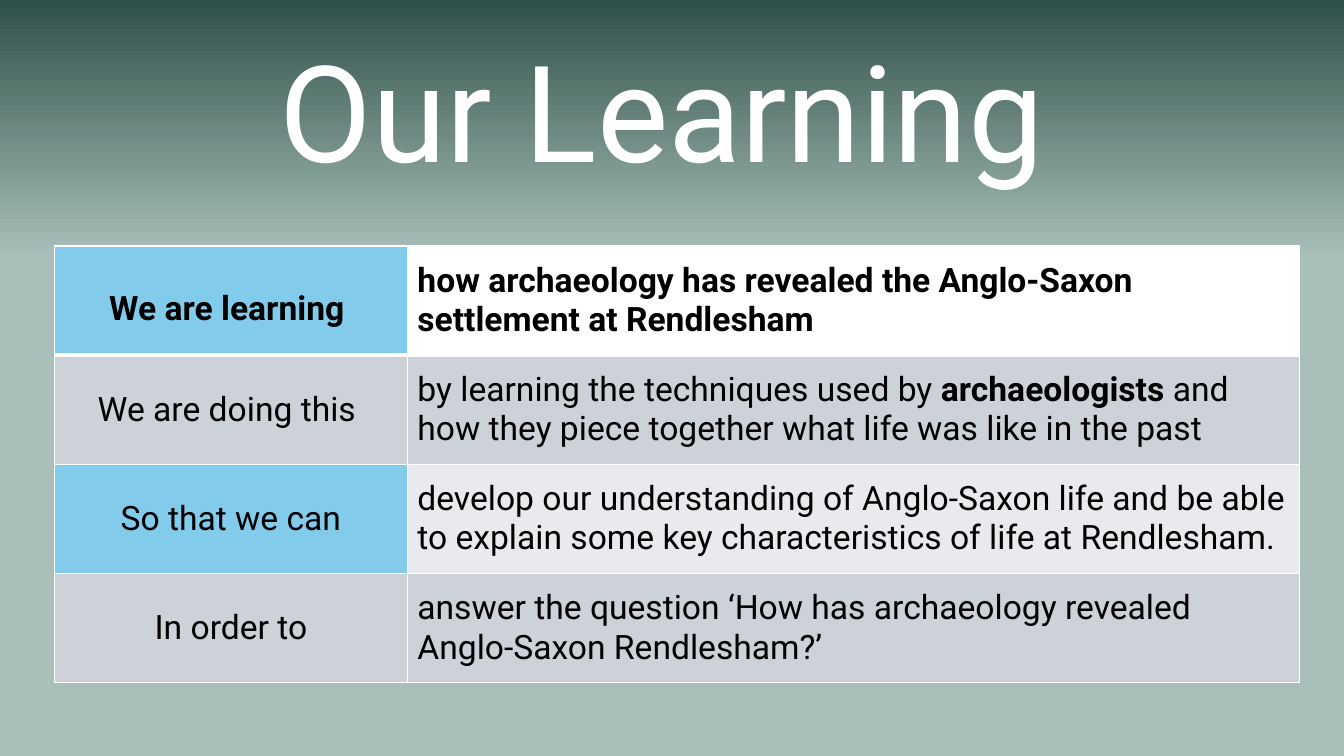
from lxml import etree
from pptx import Presentation
from pptx import util as u
from pptx.dml.color import RGBColor
from pptx.enum import text
from pptx.oxml.ns import qn

COLORS = {"dark": "2F5049", "sage": "A9BFB9", "white": "FFFFFF", "black": "000000",
          "blue": "83CBEB", "gray": "CCD2D8", "light": "E8EAED"}
FONT = "Roboto"


def style_font(font, size, color):
    font.name = FONT
    font.size = u.Pt(size)
    font.color.rgb = RGBColor.from_string(COLORS[color])


def add_borders(cell, widths):
    properties = cell._tc.get_or_add_tcPr()
    for position, (side, width) in enumerate(widths.items()):
        line = etree.Element(qn(f"a:ln{side}"), w=str(u.Pt(width)))
        solid = etree.SubElement(line, qn("a:solidFill"))
        etree.SubElement(solid, qn("a:srgbClr"), val=COLORS["white"])
        properties.insert(position, line)


presentation = Presentation()
presentation.slide_width = u.Inches(13.33)
presentation.slide_height = u.Inches(7.5)
slide = presentation.slides.add_slide(presentation.slide_layouts[5])

background = slide.background.fill
background.gradient()
background.gradient_angle = 270
for stop, color, position in zip(background.gradient_stops, ("dark", "sage"), (0, 0.34)):
    stop.color.rgb = RGBColor.from_string(COLORS[color])
    stop.position = position

title = slide.shapes.title
title.left, title.top, title.width, title.height = map(u.Inches, (1.17, 0.21, 10.79, 1.72))
title.text_frame.text = "Our Learning"
title.text_frame.auto_size = text.MSO_AUTO_SIZE.NONE
title.text_frame.vertical_anchor = text.MSO_ANCHOR.BOTTOM
heading = title.text_frame.paragraphs[0]
heading.alignment = text.PP_ALIGN.CENTER
style_font(heading.font, 96, "white")

rows = [
    ("We are learning ", "blue", "white",
     [("how archaeology has revealed the Anglo-Saxon settlement at Rendlesham", True)]),
    ("We are doing this ", "gray", "gray",
     [("by learning the techniques used by ", False), ("archaeologists ", True),
      ("and how they piece together what life was like in the past", False)]),
    ("So that we can", "blue", "light",
     [("develop our understanding of Anglo-Saxon life and be able to explain "
       "some key characteristics of life at Rendlesham.", False)]),
    ("In order to", "gray", "gray",
     [("answer the question ‘How has archaeology revealed Anglo-Saxon Rendlesham?’", False)]),
]
table = slide.shapes.add_table(len(rows), 2, u.Inches(0.54), u.Inches(2.44),
                               u.Inches(12.35), u.Inches(4.33)).table
for column, width in zip(table.columns, (3.5, 8.85)):
    column.width = u.Inches(width)

for row_index, (label, label_fill, detail_fill, detail) in enumerate(rows):
    is_first = row_index == 0
    contents = [([(label, is_first)], label_fill, text.PP_ALIGN.CENTER),
                (detail, detail_fill, text.PP_ALIGN.LEFT)]
    for column_index, (runs, fill, alignment) in enumerate(contents):
        cell = table.cell(row_index, column_index)
        cell.vertical_anchor = text.MSO_ANCHOR.MIDDLE
        cell.fill.solid()
        cell.fill.fore_color.rgb = RGBColor.from_string(COLORS[fill])
        add_borders(cell, {"L": 1, "R": 1, "T": 3 if row_index == 1 else 1,
                           "B": 3 if is_first else 1})
        paragraph = cell.text_frame.paragraphs[0]
        paragraph.alignment = alignment
        style_font(paragraph.font, 24, "black")
        for wording, bold in runs:
            run = paragraph.add_run()
            run.text = wording
            run.font.bold = bold
table.cell(0, 0).margin_top = u.Inches(0.21)

presentation.save("out.pptx")
